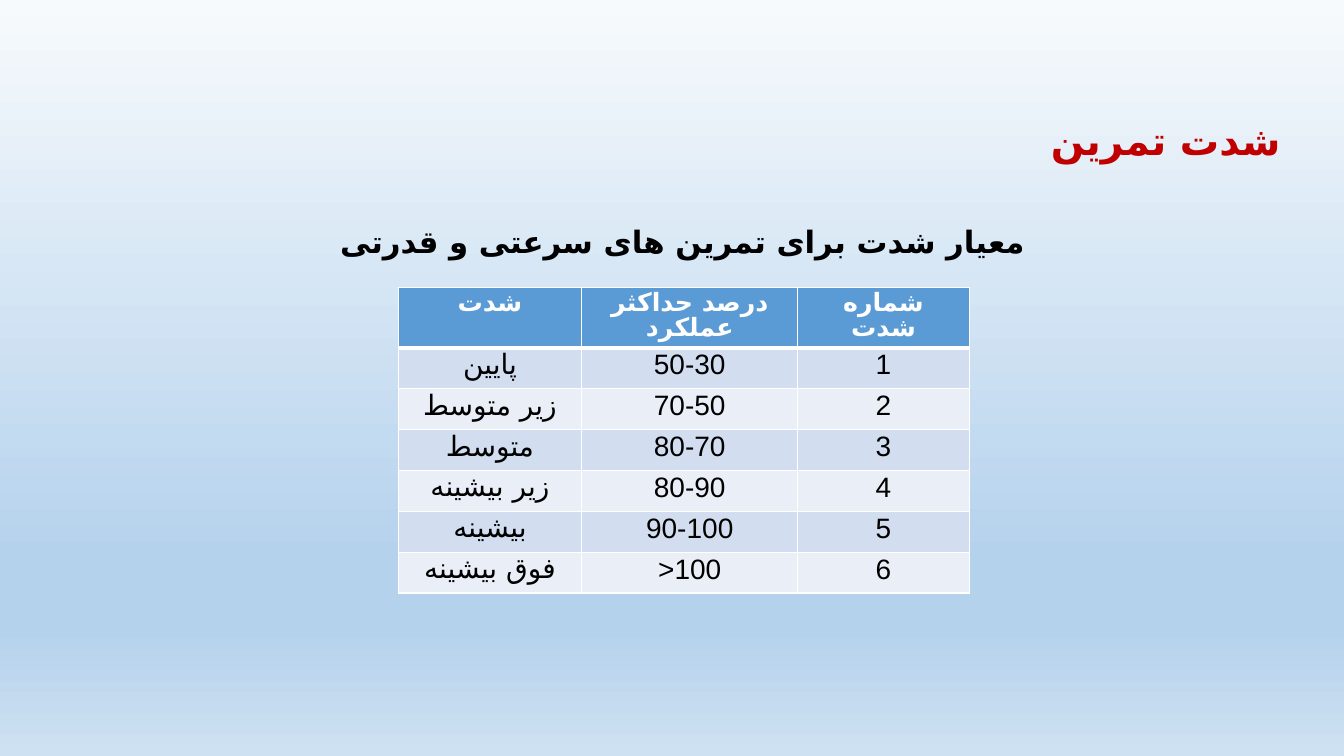
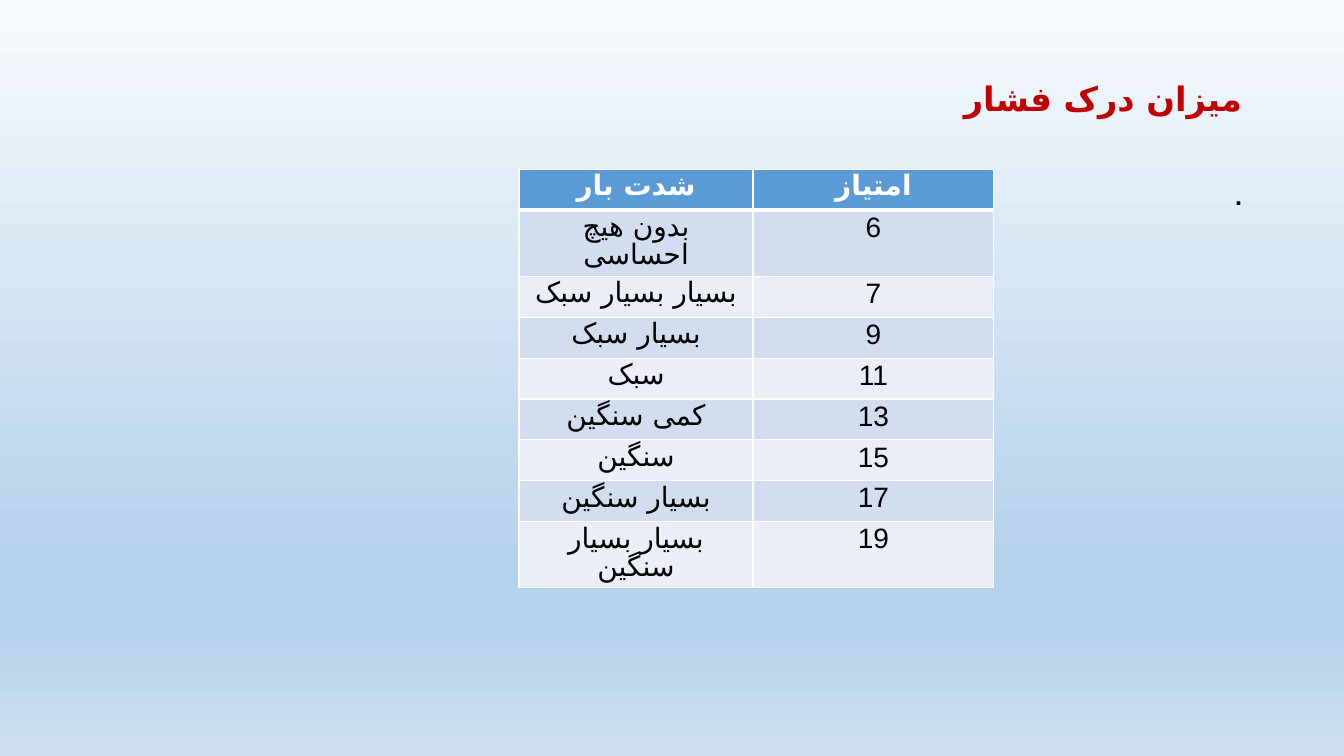
from dataclasses import dataclass

from lxml import etree
from pptx import Presentation
from pptx import util as u
from pptx.dml.color import RGBColor
from pptx.enum import text
from pptx.oxml.ns import qn


@dataclass(frozen=True)
class Theme:
    red: str = "C00000"
    ink: str = "000000"
    white: str = "FFFFFF"
    header: str = "5B9BD5"
    bands: tuple = ("D2DEEF", "EAEFF7")
    sky: tuple = ((0, "F7FAFD"), (74, "B5D2EC"), (83, "B5D2EC"), (100, "CEE1F2"))
    font: str = "Calibri"
    table_font: str = "Arial"
    persian_font: str = "DejaVu Sans"
    title: int = 28
    subtitle: int = 24
    heading: int = 22
    cell: int = 20
    small: int = 18
    row: float = 29.2
    thin: int = 1
    thick: int = 3


THEME = Theme()
WIDTH, HEIGHT = u.Inches(13.33), u.Inches(7.5)
RIGHT, CENTER = text.PP_ALIGN.RIGHT, text.PP_ALIGN.CENTER


def area(left, top, width, height):
    """Turn percentages of the slide into lengths."""
    return (int(WIDTH * left / 100), int(HEIGHT * top / 100),
            int(WIDTH * width / 100), int(HEIGHT * height / 100))


def paint_background(master):
    fill = master.background.fill
    fill.gradient()
    fill.gradient_angle = 270
    stops = master.element.find(".//" + qn("a:gsLst"))
    for stop in list(stops):
        stops.remove(stop)
    for share, color in THEME.sky:
        stop = etree.SubElement(stops, qn("a:gs"), pos=str(share * 1000))
        etree.SubElement(stop, qn("a:srgbClr"), val=color)


def write(para, words, size, color, font=THEME.font, bold=True,
          align=RIGHT, spacing=0.9, before=0):
    """Fill one right-to-left paragraph."""
    para.alignment = align
    para.line_spacing = spacing
    para.space_before = u.Pt(before)
    para._p.get_or_add_pPr().set("rtl", "1")
    span = para.add_run()
    span.text = words
    span.font.name = font
    span.font.size = u.Pt(size)
    span.font.bold = bold
    span.font.color.rgb = RGBColor.from_string(color)
    has_letters = any(mark.isalpha() for mark in words)
    etree.SubElement(span.font._element, qn("a:cs"),
                     typeface=THEME.persian_font if has_letters else THEME.table_font)


def add_frame(page, box, anchor=text.MSO_ANCHOR.TOP):
    frame = page.shapes.add_textbox(*box).text_frame
    frame.word_wrap = True
    frame.vertical_anchor = anchor
    return frame


def add_borders(cell, top, bottom):
    sides = (("L", THEME.thin), ("R", THEME.thin), ("T", top), ("B", bottom))
    props = cell._tc.get_or_add_tcPr()
    for index, (side, width) in enumerate(sides):
        line = etree.Element(qn("a:ln" + side), w=str(u.Pt(width)))
        fill = etree.SubElement(line, qn("a:solidFill"))
        etree.SubElement(fill, qn("a:srgbClr"), val=THEME.white)
        props.insert(index, line)


def add_grid(page, box, weights, rows, header_size, header_font):
    """Table with a header row and alternating bands."""
    left, top, width, _ = box
    height = u.Pt(THEME.row)
    table = page.shapes.add_table(len(rows), len(weights), left, top,
                                  width, height * len(rows)).table
    for column, weight in zip(table.columns, weights):
        column.width = int(width * weight / sum(weights))
    for r, words in enumerate(rows):
        table.rows[r].height = height
        head = r == 0
        size = header_size if head else THEME.cell
        for c, word in enumerate(words):
            cell = table.cell(r, c)
            cell.fill.solid()
            cell.fill.fore_color.rgb = RGBColor.from_string(
                THEME.header if head else THEME.bands[(r - 1) % 2])
            add_borders(cell, THEME.thick if r == 1 else THEME.thin,
                        THEME.thick if head else THEME.thin)
            write(cell.text_frame.paragraphs[0], word, size,
                  THEME.white if head else THEME.ink,
                  header_font if head else THEME.table_font,
                  bold=head, align=CENTER, spacing=u.Pt(size))


def intensity_page(page):
    # Title and table heading
    frame = add_frame(page, area(5.55, 15.47, 90.45, 74.53))
    write(frame.paragraphs[0], "شدت تمرین", THEME.title, THEME.red)
    write(frame.add_paragraph(), "معیار شدت برای تمرین های سرعتی و قدرتی",
          THEME.heading, THEME.ink, THEME.table_font, align=CENTER, before=45)
    # Intensity table
    rows = [("شدت", "درصد حداکثر عملکرد", "شماره شدت"),
            ("پایین", "50-30", "1"),
            ("زیر متوسط", "70-50", "2"),
            ("متوسط", "80-70", "3"),
            ("زیر بیشینه", "80-90", "4"),
            ("بیشینه", "90-100", "5"),
            ("فوق بیشینه", "100<", "6")]
    add_grid(page, area(29.62, 38, 42.5, 40), (1.82, 2.14, 1.7), rows,
             THEME.small, THEME.table_font)


def exertion_page(page):
    # Title
    frame = add_frame(page, area(6.9, 5.33, 86.25, 15.87), text.MSO_ANCHOR.MIDDLE)
    write(frame.paragraphs[0], "میزان درک فشار", THEME.subtitle, THEME.red)
    # Body
    frame = add_frame(page, area(6.9, 21.2, 86.25, 68.93))
    write(frame.paragraphs[0], ".", THEME.small, THEME.ink, spacing=1.5)
    # Score table
    rows = [("شدت بار", "امتیاز"),
            ("بدون هیچ احساسی", "6"),
            ("بسیار بسیار سبک", "7"),
            ("بسیار سبک", "9"),
            ("سبک", "11"),
            ("کمی سنگین", "13"),
            ("سنگین", "15"),
            ("بسیار سنگین", "17"),
            ("بسیار بسیار سنگین", "19")]
    add_grid(page, area(38.62, 22.4, 35.33, 52), (2.32, 2.39), rows,
             THEME.cell, THEME.font)


def main():
    deck = Presentation()
    deck.slide_width, deck.slide_height = WIDTH, HEIGHT
    paint_background(deck.slide_master)
    for build in (intensity_page, exertion_page):
        build(deck.slides.add_slide(deck.slide_layouts[6]))
    deck.save("out.pptx")


if __name__ == "__main__":
    main()
